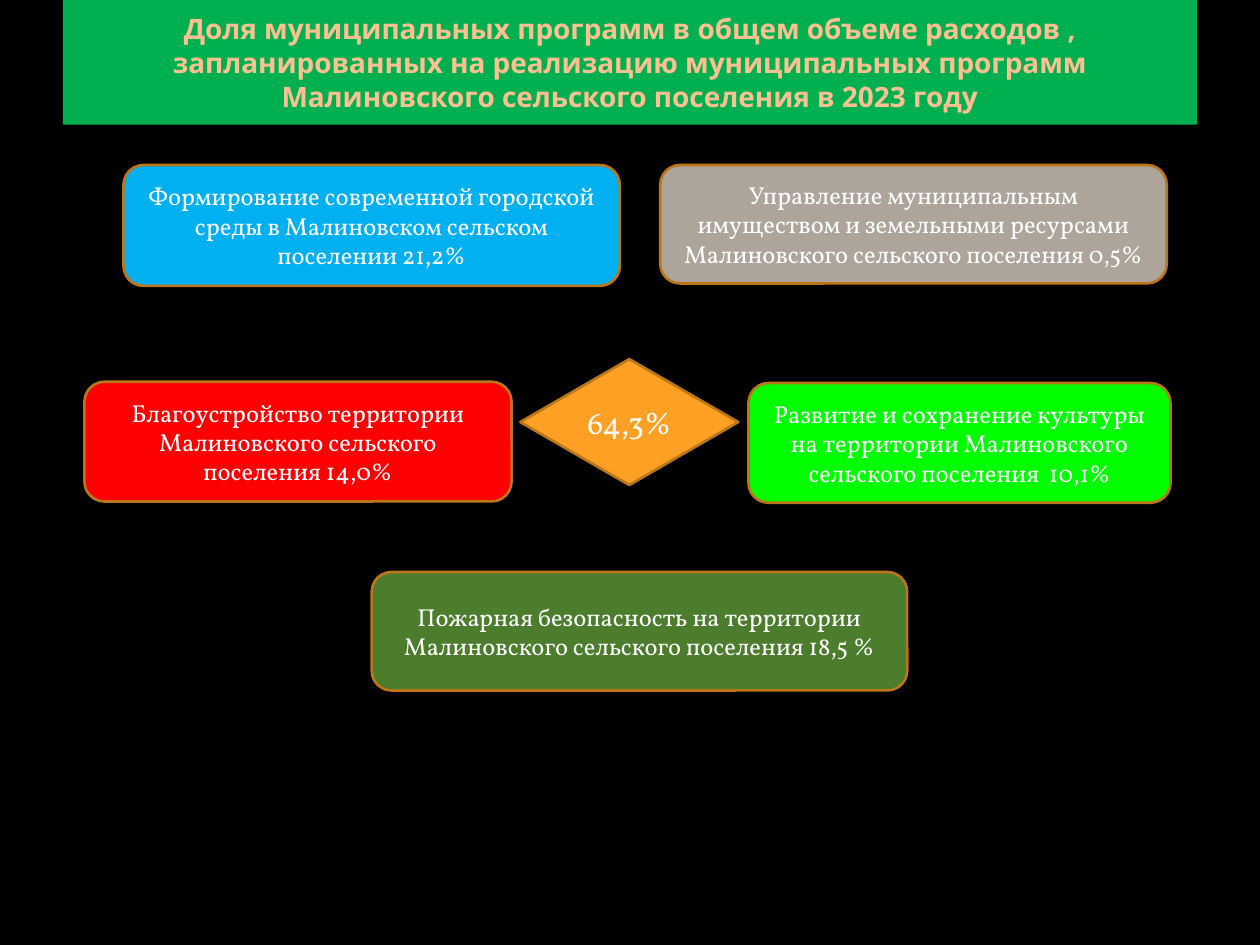
import pptx
import pptx.dml.color
import pptx.enum.shapes
import pptx.enum.text
import pptx.util

Inches = pptx.util.Inches
SHAPES = pptx.enum.shapes.MSO_SHAPE

COLORS = {
    "background": "000000",
    "title_band": "00B050",
    "title_text": "FFC091",
    "outline": "BB761A",
    "text": "FFFFFF",
    "improvement": "FF0000",
    "culture": "00FF00",
    "urban": "00B0F0",
    "fire_safety": "4B7D2C",
    "total": "FDA023",
    "property": "ADA59A",
}

# Color key, text, (left, top, width, height) in inches
PROGRAMS = [
    ("improvement",
     "Благоустройство территории Малиновского сельского поселения 14,0%",
     (0.67, 3.03, 3.39, 0.95)),
    ("culture",
     "Развитие и сохранение культуры на территории Малиновского "
     "сельского поселения  10,1%",
     (5.94, 3.04, 3.35, 0.95)),
    ("urban",
     "Формирование современной городской среды в Малиновском "
     "сельском поселении 21,2%",
     (0.98, 1.31, 3.94, 0.96)),
    ("fire_safety",
     "Пожарная безопасность на территории Малиновского "
     "сельского поселения 18,5 %",
     (2.95, 4.54, 4.25, 0.94)),
    ("property",
     "Управление муниципальным имуществом и земельными ресурсами "
     "Малиновского сельского поселения 0,5%",
     (5.24, 1.31, 4.02, 0.94)),
]


def rgb(key):
    return pptx.dml.color.RGBColor.from_string(COLORS[key])


def write_text(shape, text, size=14, font="Vollkorn", color="text",
               bold=False, wrap=True):
    frame = shape.text_frame
    frame.word_wrap = wrap
    frame.vertical_anchor = pptx.enum.text.MSO_ANCHOR.MIDDLE
    paragraph = frame.paragraphs[0]
    paragraph.alignment = pptx.enum.text.PP_ALIGN.CENTER
    run = paragraph.add_run()
    run.text = text
    run.font.size = pptx.util.Pt(size)
    run.font.name = font
    run.font.bold = bold
    run.font.color.rgb = rgb(color)


def add_block(slide, kind, box, fill, outlined=True):
    block = slide.shapes.add_shape(kind, *(Inches(value) for value in box))
    block.shadow.inherit = False
    block.fill.solid()
    block.fill.fore_color.rgb = rgb(fill)
    if outlined:
        block.line.color.rgb = rgb("outline")
        block.line.width = pptx.util.Pt(1.5)
    else:
        block.line.fill.background()
    return block


def main():
    presentation = pptx.Presentation()
    presentation.slide_width = Inches(10)
    presentation.slide_height = Inches(7.5)
    slide = presentation.slides.add_slide(presentation.slide_layouts[6])
    slide.background.fill.solid()
    slide.background.fill.fore_color.rgb = rgb("background")

    # Title band
    title = add_block(slide, SHAPES.RECTANGLE, (0.5, 0, 9, 0.99),
                      "title_band", outlined=False)
    write_text(
        title,
        "Доля муниципальных программ в общем объеме расходов , "
        "запланированных на реализацию муниципальных программ "
        "Малиновского сельского поселения в 2023 году",
        size=16, font="Noto Sans", color="title_text", bold=True)

    # Municipal programs
    for fill, text, box in PROGRAMS:
        program = add_block(slide, SHAPES.ROUNDED_RECTANGLE, box, fill)
        write_text(program, text)

    # Total share
    total = add_block(slide, SHAPES.DIAMOND, (4.13, 2.85, 1.73, 1), "total")
    write_text(total, "64,3%", size=18, wrap=False)

    presentation.save("out.pptx")


if __name__ == "__main__":
    main()
